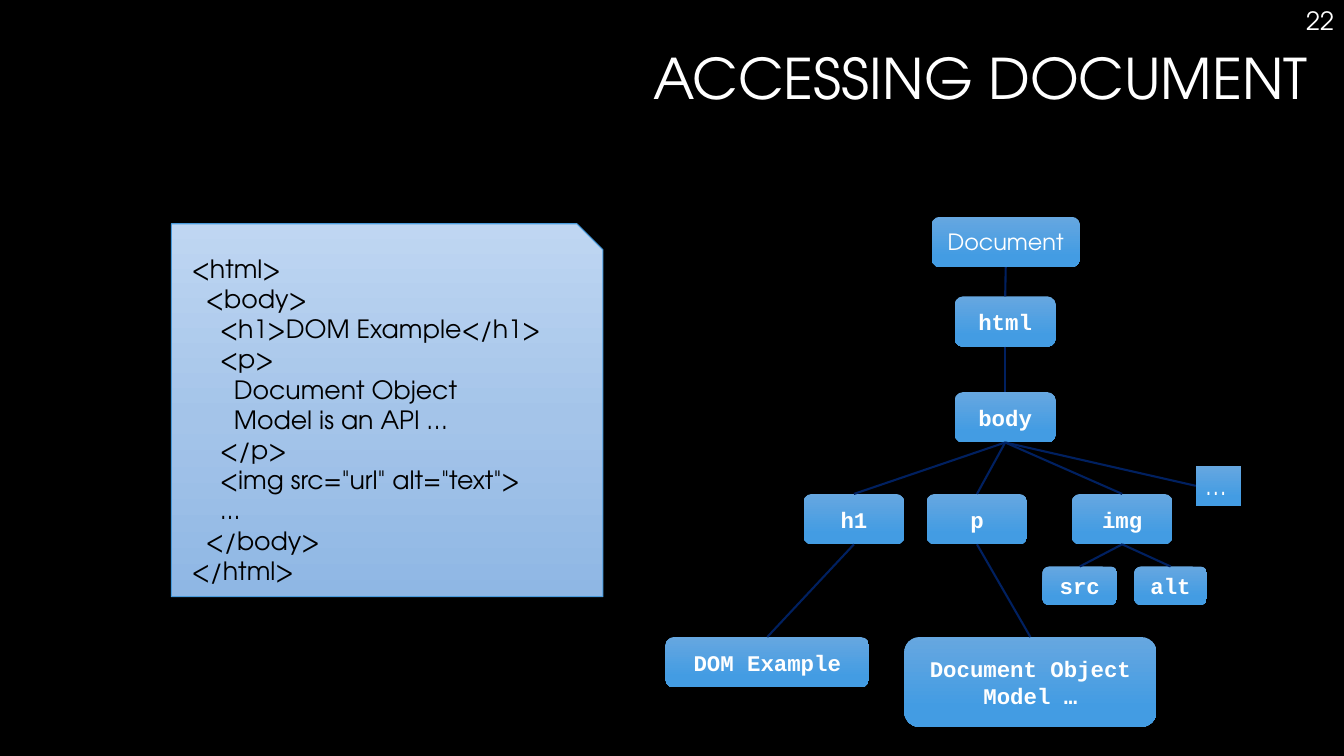
"""Build a slide that shows an HTML document beside its object tree."""
from dataclasses import dataclass

import lxml.etree
import pptx
import pptx.dml.color
import pptx.enum.shapes
import pptx.enum.text
import pptx.oxml.ns
import pptx.shapes.autoshape
import pptx.slide
import pptx.text.text
import pptx.util

EMU_PER_PX = 9144
BLACK = pptx.dml.color.RGBColor(0x00, 0x00, 0x00)
WHITE = pptx.dml.color.RGBColor(0xFF, 0xFF, 0xFF)
NAVY = pptx.dml.color.RGBColor(0x00, 0x20, 0x60)
PAGE_EDGE = pptx.dml.color.RGBColor(0x4A, 0x9B, 0xDC)
PAGE_TOP = pptx.dml.color.RGBColor(0xBF, 0xD6, 0xF2)
PAGE_MIDDLE = pptx.dml.color.RGBColor(0xA4, 0xC4, 0xE9)
PAGE_BOTTOM = pptx.dml.color.RGBColor(0x8F, 0xB7, 0xE4)
NODE_TOP = pptx.dml.color.RGBColor(0x66, 0xA7, 0xE0)
NODE_BOTTOM = pptx.dml.color.RGBColor(0x43, 0x9C, 0xE3)
PAGE_STOPS = ((0, PAGE_TOP), (52, PAGE_MIDDLE), (100, PAGE_BOTTOM))
NODE_STOPS = ((0, NODE_TOP), (78, NODE_BOTTOM))
SANS = "TeX Gyre Adventor"
MONO = "Courier New"
INDENT = 14
TOP, LEFT, BOTTOM = 0, 1, 2
SHAPES = pptx.enum.shapes.MSO_SHAPE
ALIGN = pptx.enum.text.PP_ALIGN
ANCHOR = pptx.enum.text.MSO_ANCHOR


@dataclass(frozen=True)
class CodeLine:
    """A line of the listing and its depth."""
    depth: int
    text: str


@dataclass(frozen=True)
class Node:
    """A box of the document tree, in px."""
    text: str
    left: int
    top: int
    width: int = 100
    height: int = 50
    font: str = MONO


@dataclass(frozen=True)
class Edge:
    """A line from the bottom of one node to a side of another."""
    parent: str
    child: str
    side: int = TOP


CODE = (
    CodeLine(0, "<html>"),
    CodeLine(1, "<body>"),
    CodeLine(2, "<h1>DOM Example</h1>"),
    CodeLine(2, "<p>"),
    CodeLine(3, "Document Object"),
    CodeLine(3, "Model is an API …"),
    CodeLine(2, "</p>"),
    CodeLine(2, '<img src="url" alt="text">'),
    CodeLine(2, "..."),
    CodeLine(1, "</body>"),
    CodeLine(0, "</html>"),
)
NODES = (
    Node("Document", 924, 215, 147, font=SANS),
    Node("html", 947, 294),
    Node("body", 947, 389),
    Node("h1", 797, 490),
    Node("p", 919, 490),
    Node("img", 1063, 490),
    Node("src", 1034, 562, 74, 38),
    Node("alt", 1125, 562, 72, 38),
    Node("DOM Example", 660, 632, 202),
    Node("Document Object Model …", 897, 632, 250, 89),
)
ELLIPSIS = Node("…", 1186, 462, 45, 40, SANS)
EDGES = (
    Edge("Document", "html"),
    Edge("html", "body"),
    Edge("body", "h1"),
    Edge("body", "p"),
    Edge("body", "img"),
    Edge("body", "…", LEFT),
    Edge("img", "src"),
    Edge("img", "alt"),
    Edge("h1", "DOM Example"),
    Edge("p", "Document Object Model …"),
)


def px(length: int) -> pptx.util.Emu:
    """Turn px into EMU."""
    return pptx.util.Emu(length * EMU_PER_PX)


def add_element(parent: lxml.etree._Element, tag: str, **attributes: str) -> lxml.etree._Element:
    """Append a DrawingML element."""
    return lxml.etree.SubElement(parent, pptx.oxml.ns.qn(tag), attributes)


def write_text(paragraph: pptx.text.text._Paragraph, text: str, *, size: int = 18,
               font: str = SANS, color: pptx.dml.color.RGBColor = WHITE, bold: bool = False,
               align: ALIGN = ALIGN.LEFT, indent: int = 0) -> None:
    """Write formatted text into a paragraph."""
    run = paragraph.add_run()
    run.text = text
    run.font.size = pptx.util.Pt(size)
    run.font.name = font
    run.font.color.rgb = color
    run.font.bold = bold
    paragraph.alignment = align
    if indent:
        paragraph._p.get_or_add_pPr().set("marL", str(px(indent)))


def fill_gradient(shape: pptx.shapes.autoshape.Shape, stops: tuple) -> None:
    """Fill a shape from top to bottom with the given stops."""
    shape.fill.gradient()
    shape.fill.gradient_angle = 270
    stop_list = shape.element.spPr.find(".//" + pptx.oxml.ns.qn("a:gsLst"))
    for stop in list(stop_list):
        stop_list.remove(stop)
    for percent, color in stops:
        stop = add_element(stop_list, "a:gs", pos=str(percent * 1000))
        add_element(stop, "a:srgbClr", val=str(color))


def add_node(slide: pptx.slide.Slide, node: Node, kind: SHAPES) -> pptx.shapes.autoshape.Shape:
    """Draw the box of a node with its shadow."""
    shape = slide.shapes.add_shape(kind, px(node.left), px(node.top), px(node.width), px(node.height))
    fill_gradient(shape, NODE_STOPS)
    shape.line.fill.background()
    shape.shadow.inherit = False
    effects = shape.element.spPr.find(pptx.oxml.ns.qn("a:effectLst"))
    shadow = add_element(effects, "a:outerShdw", blurRad=str(pptx.util.Pt(4.5)),
                         dist=str(pptx.util.Pt(1.5)), dir="5400000", rotWithShape="0")
    color = add_element(shadow, "a:srgbClr", val=str(BLACK))
    add_element(color, "a:alpha", val="48000")
    frame = shape.text_frame
    if node is ELLIPSIS:
        frame.word_wrap = False
        frame.auto_size = pptx.enum.text.MSO_AUTO_SIZE.SHAPE_TO_FIT_TEXT
        frame.vertical_anchor = ANCHOR.TOP
        write_text(frame.paragraphs[0], node.text)
    else:
        frame.word_wrap = True
        frame.vertical_anchor = ANCHOR.MIDDLE
        write_text(frame.paragraphs[0], node.text, size=16, font=node.font,
                   bold=node.font == MONO, align=ALIGN.CENTER)
    return shape


def add_edge(slide: pptx.slide.Slide, edge: Edge, boxes: dict) -> None:
    """Connect two boxes."""
    line = slide.shapes.add_connector(pptx.enum.shapes.MSO_CONNECTOR.STRAIGHT, 0, 0, 0, 0)
    line.begin_connect(boxes[edge.parent], BOTTOM)
    line.end_connect(boxes[edge.child], edge.side)
    line.line.color.rgb = NAVY
    line.line.width = pptx.util.Pt(1.5)
    add_element(line.element.spPr, "a:effectLst")


def add_headings(slide: pptx.slide.Slide) -> None:
    """Set the title and the page number."""
    title = slide.shapes.title
    title.left, title.top, title.width, title.height = px(26), px(46), px(1281), px(141)
    title.text_frame.vertical_anchor = ANCHOR.TOP
    title.text_frame.auto_size = pptx.enum.text.MSO_AUTO_SIZE.NONE
    paragraph = title.text_frame.paragraphs[0]
    paragraph.line_spacing = 0.9
    write_text(paragraph, "ACCESSING DOCUMENT", size=40, align=ALIGN.RIGHT)
    number = slide.shapes.add_textbox(px(1045), 0, px(288), px(40))
    number.text_frame.word_wrap = True
    write_text(number.text_frame.paragraphs[0], "22", align=ALIGN.RIGHT)


def add_listing(slide: pptx.slide.Slide) -> None:
    """Draw the page with the HTML listing."""
    page = slide.shapes.add_shape(SHAPES.SNIP_1_RECTANGLE, px(170), px(222), px(428), px(370))
    page.adjustments[0] = 0.07
    fill_gradient(page, PAGE_STOPS)
    page.line.color.rgb = PAGE_EDGE
    page.line.width = pptx.util.Pt(0.75)
    page.shadow.inherit = False
    frame = page.text_frame
    frame.word_wrap = True
    frame.vertical_anchor = ANCHOR.TOP
    frame.margin_left = frame.margin_right = frame.margin_bottom = px(20)
    frame.margin_top = px(16)
    for index, line in enumerate(CODE):
        paragraph = frame.add_paragraph() if index else frame.paragraphs[0]
        write_text(paragraph, line.text, color=BLACK, indent=line.depth * INDENT)


def main() -> None:
    """Build and save the presentation."""
    presentation = pptx.Presentation()
    presentation.slide_width, presentation.slide_height = px(1333), px(750)
    slide = presentation.slides.add_slide(presentation.slide_layouts.get_by_name("Title Only"))
    slide.background.fill.solid()
    slide.background.fill.fore_color.rgb = BLACK
    add_headings(slide)
    add_listing(slide)
    boxes = {node.text: add_node(slide, node, SHAPES.ROUNDED_RECTANGLE) for node in NODES}
    boxes[ELLIPSIS.text] = add_node(slide, ELLIPSIS, SHAPES.RECTANGLE)
    for edge in EDGES:
        add_edge(slide, edge, boxes)
    presentation.save("out.pptx")


if __name__ == "__main__":
    main()
